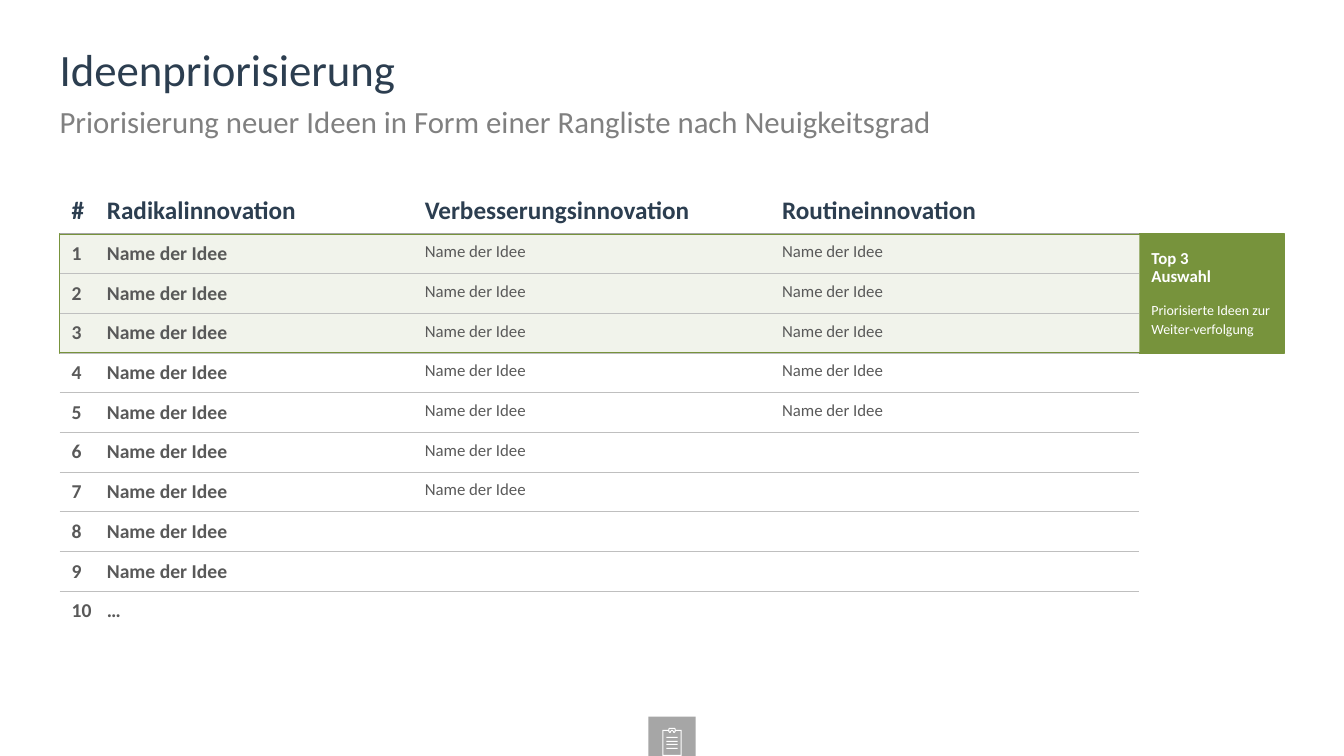
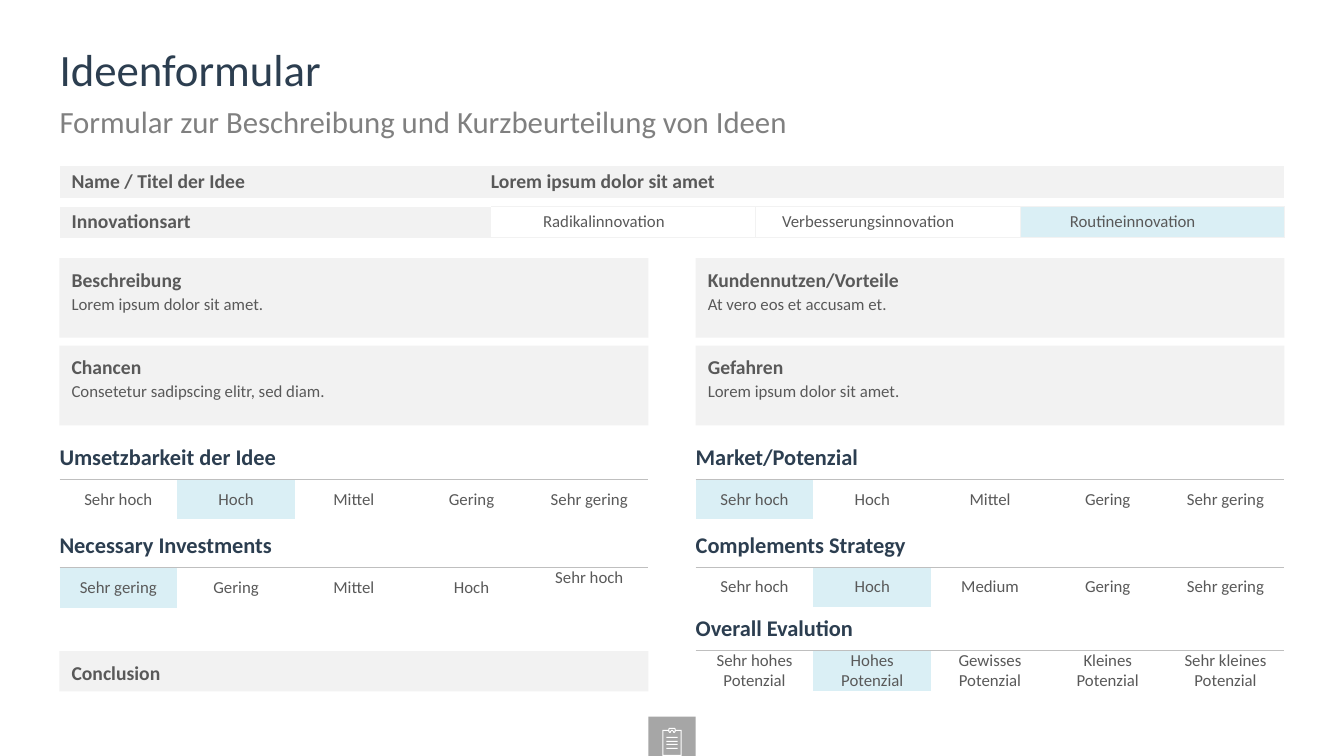
from copy import deepcopy
from dataclasses import dataclass

from lxml import etree
from pptx import Presentation
from pptx.dml.color import RGBColor
from pptx.enum.shapes import MSO_SHAPE
from pptx.enum.text import MSO_ANCHOR, MSO_AUTO_SIZE, PP_ALIGN
from pptx.oxml.ns import qn
from pptx.util import Inches, Pt

RECT = MSO_SHAPE.RECTANGLE
LEFT, CENTER = PP_ALIGN.LEFT, PP_ALIGN.CENTER
TOP, MIDDLE, BOTTOM = MSO_ANCHOR.TOP, MSO_ANCHOR.MIDDLE, MSO_ANCHOR.BOTTOM
FIXED = MSO_AUTO_SIZE.NONE
NO_STYLE = "{2D5ABB26-0587-4C30-8999-92F81FD0307C}"


@dataclass(frozen=True)
class Theme:
    font: str = "Calibri"
    navy: str = "2C3E50"
    subtitle: str = "808080"
    text: str = "595959"
    white: str = "FFFFFF"
    green: str = "77933C"
    blue: str = "DAEFF5"
    panel: str = "F2F2F2"
    rule: str = "BFBFBF"
    gray: str = "A6A6A6"
    title_size: int = 32
    subtitle_size: int = 22
    column_size: int = 18
    section_size: int = 16
    label_size: int = 14
    body_size: int = 12
    note_size: int = 10


@dataclass(frozen=True)
class Box:
    x: float
    y: float
    w: float
    h: float

    def emu(self):
        return [Inches(v) for v in (self.x, self.y, self.w, self.h)]

    def sub(self, dx, dy, w, h):
        return Box(self.x + dx, self.y + dy, w, h)


T = Theme()
W, H = 13.33, 7.5
MARGIN, GAP, PAD = 0.59, 0.47, 0.12
PAGE = Box(MARGIN, 0.47, W - 2 * MARGIN, 6.39)
HALF = (PAGE.w - GAP) / 2


def rgb(color):
    return RGBColor.from_string(color)


def write(p, text, size=T.body_size, color=T.text, bold=False, align=LEFT,
          spacing=None, after=0):
    p.text = text
    p.alignment = align
    p.space_before, p.space_after = Pt(0), Pt(after)
    if spacing:
        p.line_spacing = spacing
    for r in p.runs:
        r.font.name = T.font
        r.font.size = Pt(size)
        r.font.bold = bold
        r.font.color.rgb = rgb(color)
    for br in p._p.findall(qn("a:br")):
        br.append(deepcopy(p.runs[0]._r.rPr))
    if not text:
        p._p.get_or_add_endParaRPr().set("sz", str(size * 100))


def set_margins(target, margins):
    (target.margin_left, target.margin_top,
     target.margin_right, target.margin_bottom) = [Inches(m) for m in margins]


def add_rect(slide, box, color):
    sp = slide.shapes.add_shape(RECT, *box.emu())
    sp.shadow.inherit = False
    sp.fill.solid()
    sp.fill.fore_color.rgb = rgb(color)
    sp.line.fill.background()
    return sp


def add_panel(slide, box, label, text=None):
    tf = add_rect(slide, box, T.panel).text_frame
    tf.word_wrap = True
    tf.vertical_anchor = TOP
    set_margins(tf, (PAD, PAD, PAD, 0))
    write(tf.paragraphs[0], label, size=T.label_size, bold=True,
          spacing=0.9, after=3)
    if text:
        write(tf.add_paragraph(), text, spacing=0.9, after=10)


def add_table(slide, box, cols, rows):
    table = slide.shapes.add_table(len(rows), len(cols), *box.emu()).table
    table.first_row = table.horz_banding = False
    table._tbl.tblPr.find(qn("a:tableStyleId")).text = NO_STYLE
    for col, share in zip(table.columns, cols):
        col.width = Inches(box.w * share / sum(cols))
    for row, share in zip(table.rows, rows):
        row.height = Inches(box.h * share / sum(rows))
    return table


def fill_cell(cell, text, margins, anchor=TOP, fill=None, sides="",
              line=T.rule, width=1, **fmt):
    set_margins(cell, margins)
    cell.vertical_anchor = anchor
    write(cell.text_frame.paragraphs[0], text, **fmt)
    tcPr = cell._tc.get_or_add_tcPr()
    for side in sides:
        ln = etree.SubElement(tcPr, qn(f"a:ln{side}"), w=str(Pt(width)))
        solid = etree.SubElement(ln, qn("a:solidFill"))
        etree.SubElement(solid, qn("a:srgbClr"), val=line)
    if fill:
        cell.fill.solid()
        cell.fill.fore_color.rgb = rgb(fill)
    else:
        cell.fill.background()


def add_heading(sp, box, text, size, color, after=0):
    sp.left, sp.top, sp.width, sp.height = box.emu()
    tf = sp.text_frame
    tf.word_wrap = True
    tf.auto_size = FIXED
    tf.vertical_anchor = TOP
    set_margins(tf, (0, 0, 0, 0))
    p = tf.paragraphs[0]
    pPr = p._p.get_or_add_pPr()
    pPr.set("marL", "0")
    pPr.set("indent", "0")
    etree.SubElement(pPr, qn("a:buNone"))
    write(p, text, size=size, color=color, spacing=0.9, after=after)


def add_clipboard(slide, box):
    add_rect(slide, box, T.gray)
    outlines = [
        [(0, 2), (6, 2), (6, 1), (7, 0), (12, 0), (13, 1), (13, 2), (19, 2),
         (19, 28), (0, 28)],
        [(1, 3), (1, 27), (18, 27), (18, 3), (13, 3), (13, 4), (12, 5),
         (11, 5), (10, 3), (9, 3), (8, 5), (7, 5), (6, 4), (6, 3)],
        [(7, 1), (7, 4), (9, 2), (10, 2), (12, 4), (12, 1)],
    ]
    outlines += [[(4, y), (15, y), (15, y + 1), (4, y + 1)]
                 for y in (9, 13, 16, 20)]
    fb = slide.shapes.build_freeform(*outlines[0][0], scale=Inches(0.01))
    for i, points in enumerate(outlines):
        if i:
            fb.move_to(*points[0])
        fb.add_line_segments(points[1:], close=True)
    sp = fb.convert_to_shape(Inches(box.x + 0.14), Inches(box.y + 0.11))
    sp.shadow.inherit = False
    sp.fill.solid()
    sp.fill.fore_color.rgb = rgb(T.white)
    sp.line.fill.background()


def add_page(prs, title, subtitle):
    slide = prs.slides.add_slide(prs.slide_layouts[1])
    head = PAGE.sub(0, 0, PAGE.w, 0.59)
    add_heading(slide.shapes.title, head, title, T.title_size, T.navy)
    add_heading(slide.placeholders[1], head.sub(0, head.h, head.w, head.h),
                subtitle, T.subtitle_size, T.subtitle, after=10)
    add_clipboard(slide, Box((W - GAP) / 2, H - 0.39, GAP, 0.39))
    return slide


def add_top_three(slide, box, note_width):
    sp = add_rect(slide, box, T.green)
    clr = sp._element.spPr.find(qn("a:solidFill"))[0]
    etree.SubElement(clr, qn("a:alpha"), val="10000")
    sp.line.color.rgb = rgb(T.green)
    sp.line.width = Pt(1)
    note = box.sub(box.w - note_width, 0, note_width, box.h)
    tf = add_rect(slide, note, T.green).text_frame
    tf.word_wrap = True
    tf.vertical_anchor = MIDDLE
    set_margins(tf, (PAD, 0.04, PAD, 0.04))
    write(tf.paragraphs[0], "Top 3\vAuswahl", color=T.white, bold=True,
          spacing=0.9, after=10)
    write(tf.add_paragraph(), "Priorisierte Ideen zur Weiter-verfolgung",
          size=T.note_size, color=T.white, spacing=1.1, after=10)


def add_ranking(slide, box, headers, counts):
    ranks = max(counts)
    row_h = (box.h - GAP) / ranks
    table_w = 10.71
    add_top_three(slide, box.sub(0, GAP, box.w, 3 * row_h), box.w - table_w)
    table = add_table(slide, box.sub(0, 0, table_w, box.h),
                      [0.47, 3.15, 3.54, 3.54], [GAP] + [row_h] * ranks)
    for c, header in enumerate(headers):
        left = 0 if c else PAD
        fill_cell(table.cell(0, c), header, (left, 0, PAD, 0.08), BOTTOM,
                  sides="B", line=T.gray, size=T.column_size,
                  color=T.navy, bold=True)
        for r in range(1, ranks + 1):
            if c == 0:
                text = str(r)
            elif c == 1 and r == ranks:
                text = "…"
            else:
                text = "Name der Idee" if r <= counts[c] else ""
            main_col = c < 2
            fill_cell(table.cell(r, c), text, (left, 0.08, PAD, 0),
                      sides="B" if r < ranks else "", width=0.5, bold=main_col,
                      size=T.label_size if main_col else T.body_size)


def add_idea_name(slide, box, label, name):
    table = add_table(slide, box, [3.54, 0.74, 7.87], [1])
    for c, text in enumerate((label, "", name)):
        fill_cell(table.cell(0, c), text, (0 if c else PAD, 0.04, 0.39, 0),
                  fill=T.panel, size=T.label_size, bold=True)


def add_idea_type(slide, box, label, options, chosen):
    table = add_table(slide, box, [3.54, 0.74] + [2.62] * len(options), [1])
    for c, text in enumerate((label, "")):
        fill_cell(table.cell(0, c), text, (0 if c else PAD, 0, 0.39, 0),
                  MIDDLE, fill=T.panel, size=T.label_size, bold=True)
    for c, text in enumerate(options):
        fill_cell(table.cell(0, c + 2), text, (0, 0, 0.39, 0), MIDDLE,
                  fill=T.blue if c == chosen else T.white,
                  sides="LRTB" if c else "RTB", line=T.panel, align=CENTER)


def add_ratings(slide, box, ratings):
    heights = [0.47, 0.39, 0.48, 0.39, 0.43, 0.4][:2 * len(ratings)]
    table = add_table(slide, box.sub(0, 0, box.w, sum(heights)),
                      [1] * 5, heights)
    for i, (heading, levels, chosen) in enumerate(ratings):
        row = 2 * i
        table.cell(row, 0).merge(table.cell(row, 4))
        for c, level in enumerate(levels):
            fill_cell(table.cell(row, c), "" if c else heading,
                      (0, 0.08, 0, 0.08), BOTTOM, sides="B",
                      size=T.section_size, color=T.navy, bold=True)
            fill_cell(table.cell(row + 1, c), level, (0, 0, 0, 0), MIDDLE,
                      fill=T.blue if c == chosen else None, align=CENTER)
    return table


def build_ranking_slide(prs):
    slide = add_page(prs, "Ideenpriorisierung",
                     "Priorisierung neuer Ideen in Form einer Rangliste nach Neuigkeitsgrad")
    add_ranking(slide, PAGE.sub(0, 1.38, PAGE.w, 4.41),
                ["#", "Radikalinnovation", "Verbesserungsinnovation",
                 "Routineinnovation"], [10, 10, 7, 5])


def build_form_slide(prs):
    slide = add_page(prs, "Ideenformular",
                     "Formular zur Beschreibung und Kurzbeurteilung von Ideen")
    add_idea_name(slide, PAGE.sub(0, 1.18, PAGE.w, 0.31),
                  "Name / Titel der Idee", "Lorem ipsum dolor sit amet")
    add_idea_type(slide, PAGE.sub(0, 1.58, PAGE.w, 0.31), "Innovationsart",
                  ["Radikalinnovation", "Verbesserungsinnovation",
                   "Routineinnovation"], chosen=2)
    panels = [("Beschreibung", "Lorem ipsum dolor sit amet."),
              ("Kundennutzen/Vorteile", "At vero eos et accusam et."),
              ("Chancen", "Consetetur sadipscing elitr, sed diam."),
              ("Gefahren", "Lorem ipsum dolor sit amet.")]
    for i, (label, text) in enumerate(panels):
        row, col = divmod(i, 2)
        add_panel(slide, PAGE.sub(col * (HALF + GAP), 2.09 + row * 0.87,
                                  HALF, 0.79), label, text)
    falling = ["Sehr hoch", "Hoch", "Mittel", "Gering", "Sehr gering"]
    left = PAGE.sub(0, 3.82, HALF, 2.57)
    table = add_ratings(slide, left, [
        ("Umsetzbarkeit der Idee", falling, 1),
        ("Necessary Investments", falling[::-1], 0)])
    table.cell(3, 4).margin_bottom = Inches(0.2)
    add_panel(slide, left.sub(0, left.h - 0.4, HALF, 0.4), "Conclusion")
    add_ratings(slide, left.sub(HALF + GAP, 0, HALF, left.h), [
        ("Market/Potenzial", falling, 0),
        ("Complements Strategy",
         ["Sehr hoch", "Hoch", "Medium", "Gering", "Sehr gering"], 1),
        ("Overall Evalution",
         [f"{level}\vPotenzial" for level in
          ("Sehr hohes", "Hohes", "Gewisses", "Kleines", "Sehr kleines")], 1)])


def main():
    prs = Presentation()
    prs.slide_width, prs.slide_height = Inches(W), Inches(H)
    build_ranking_slide(prs)
    build_form_slide(prs)
    prs.save("out.pptx")


if __name__ == "__main__":
    main()
